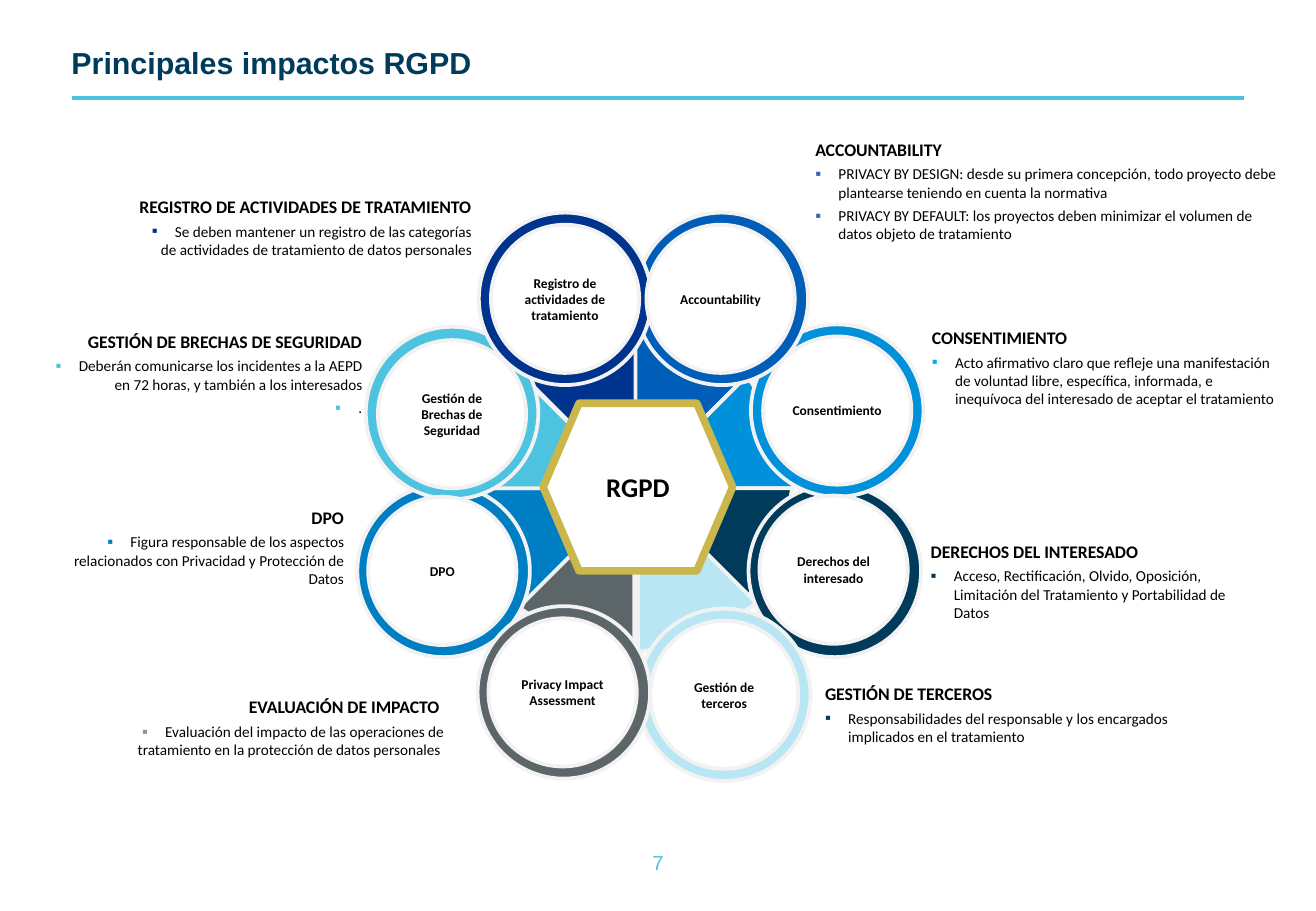
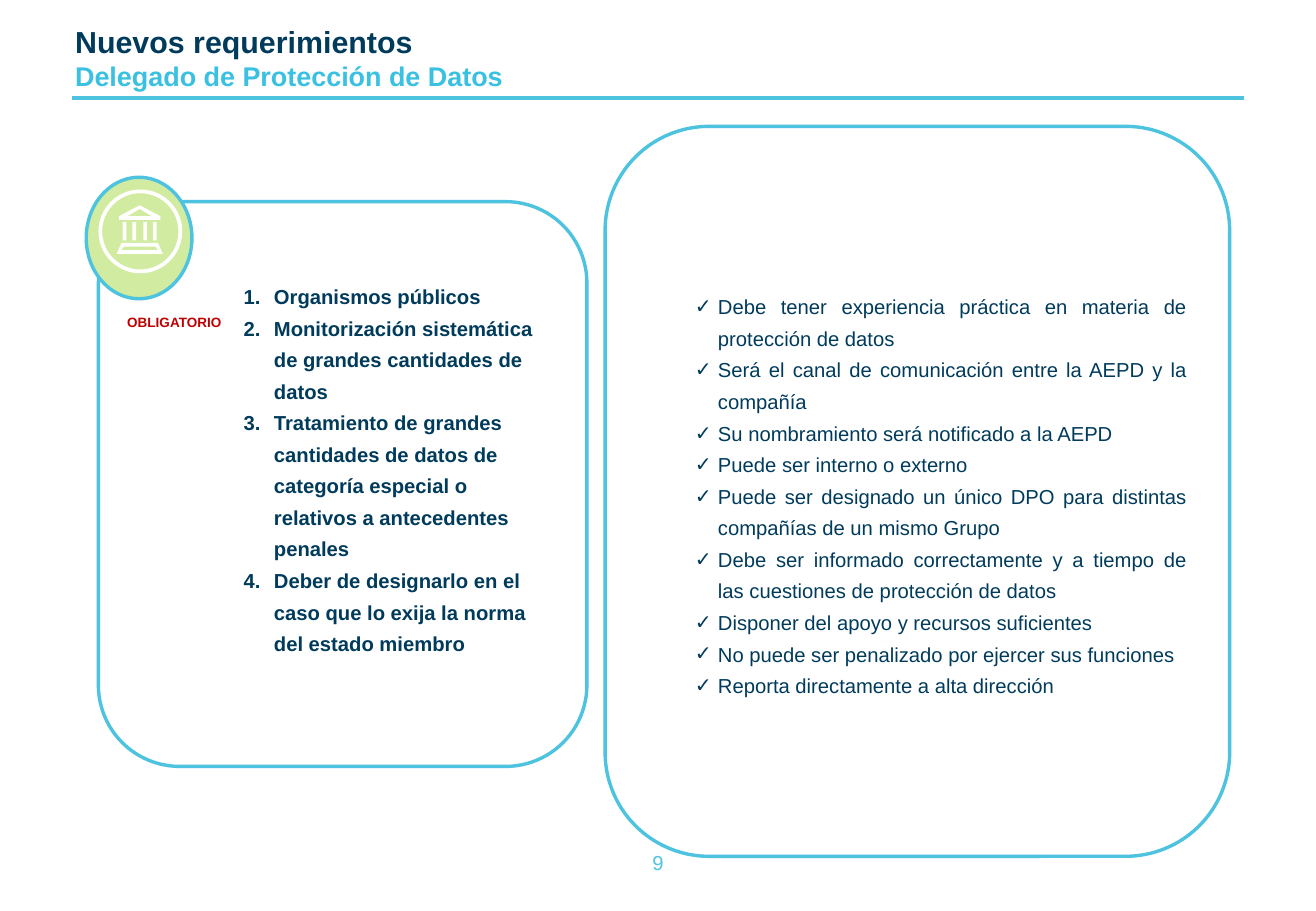
import math

import lxml.etree
import pptx
import pptx.dml.color
import pptx.enum.shapes
import pptx.enum.text
import pptx.oxml.ns
import pptx.util

PX = 9144  # EMU, 100 px to the inch
COLORS = {
    "navy": "003B5C", "cyan": "4EC3E0", "subtitle": "3AC1E1", "blue": "005EB8",
    "sky": "0091DA", "pale": "B8E7F3", "slate": "5C6568", "ocean": "007EC4",
    "royal": "00338D", "mist": "F2F2F2", "gold": "CAB64B", "white": "FFFFFF",
    "black": "000000", "grey": "8D969A", "azure": "00B0F0", "denim": "4066AA",
    "lime": "D1ECA0", "red": "C00000",
}
SHAPE = pptx.enum.shapes.MSO_SHAPE
STRAIGHT = pptx.enum.shapes.MSO_CONNECTOR.STRAIGHT
ALIGN = pptx.enum.text.PP_ALIGN
ANCHOR = pptx.enum.text.MSO_ANCHOR
qn = pptx.oxml.ns.qn


def paint(shape, fill, line, weight=2.25):
    """Set fill and outline, and remove the theme shadow."""
    if fill:
        shape.fill.solid()
        shape.fill.fore_color.rgb = pptx.dml.color.RGBColor.from_string(COLORS[fill])
    if line:
        shape.line.color.rgb = pptx.dml.color.RGBColor.from_string(COLORS[line])
        shape.line.width = pptx.util.Pt(weight)
    else:
        shape.line.fill.background()
    lxml.etree.SubElement(shape._element.spPr, qn("a:effectLst"))


def write(frame, text, size, color, bold=False, font="Arial", align=ALIGN.LEFT,
          after=0, spacing=None, indent=(0, 0), bullet=None, bullet_color=None, percent=100):
    """Add one paragraph; bullet is a character, or "1." for automatic numbers."""
    frame.word_wrap = True
    first = frame.paragraphs[0]
    paragraph = frame.add_paragraph() if first.runs else first
    paragraph.add_run().text = text
    paragraph.alignment = align
    paragraph.space_after = pptx.util.Pt(after)
    if spacing:
        paragraph.line_spacing = spacing
    if bullet:
        props = paragraph._p.get_or_add_pPr()
        props.set("marL", str(indent[0] * PX))
        props.set("indent", str(indent[1] * PX))
        tint = lxml.etree.SubElement(props, qn("a:buClr"))
        lxml.etree.SubElement(tint, qn("a:srgbClr"), val=COLORS[bullet_color])
        lxml.etree.SubElement(props, qn("a:buSzPct"), val=str(percent * 1000))
        lxml.etree.SubElement(props, qn("a:buFont"), typeface="Arial")
        if bullet == "1.":
            lxml.etree.SubElement(props, qn("a:buAutoNum"), type="arabicPeriod")
        else:
            lxml.etree.SubElement(props, qn("a:buChar"), char=bullet)
    paragraph.font.name = font
    paragraph.font.size = pptx.util.Pt(size)
    paragraph.font.bold = bold
    paragraph.font.color.rgb = pptx.dml.color.RGBColor.from_string(COLORS[color])


deck = pptx.Presentation()
deck.slide_width = 1083 * PX
deck.slide_height = 750 * PX

# Shared header and page number
headers = [
    ("7", (49, 14), [("Principales impactos RGPD", 18, "navy")]),
    ("9", (52, 24), [("Nuevos requerimientos", 18, "navy"),
                     ("Delegado de Protección de Datos", 16, "subtitle")]),
]
for number, (left, top), titles in headers:
    page = deck.slides.add_slide(deck.slide_layouts[6])
    header_line = page.shapes.add_connector(STRAIGHT, 59 * PX, 81 * PX, 1024 * PX, 81 * PX)
    paint(header_line, None, "cyan")
    box = page.shapes.add_textbox(415 * PX, 695 * PX, 253 * PX, 40 * PX)
    write(box.text_frame, number, 12, "cyan", align=ALIGN.CENTER)
    box = page.shapes.add_textbox(left * PX, top * PX, 984 * PX, 57 * PX)
    box.text_frame.vertical_anchor = ANCHOR.BOTTOM
    for title, size, color in titles:
        write(box.text_frame, title, size, color, bold=True)

wheel_page, officer_page = deck.slides

# Wheel: one 45 degree wedge per topic, clockwise from the top
wedges = [
    ("blue", 522, 402, 132), ("sky", 522, 402, 131), ("navy", 522, 402, 130),
    ("pale", 525, 399, 138), ("slate", 522, 402, 137), ("ocean", 525, 402, 136),
    ("cyan", 522, 402, 136), ("royal", 523, 402, 135),
]
ARC_STEPS = 2
for index, (color, hub_x, hub_y, radius) in enumerate(wedges):
    arc = []
    for step in range(ARC_STEPS + 1):
        angle = math.radians(45 * (index + step / ARC_STEPS) - 90)
        arc.append((round((hub_x + radius * math.cos(angle)) * PX),
                    round((hub_y + radius * math.sin(angle)) * PX)))
    builder = wheel_page.shapes.build_freeform(hub_x * PX, hub_y * PX)
    builder.add_line_segments(arc, close=True)
    paint(builder.convert_to_shape(), color, "mist")

# Label, colour, ring corner, disc corner
topics = [
    ("DPO", "ocean", (294, 399), (303, 409)),
    ("Gestión de Brechas de Seguridad", "cyan", (301, 269), (311, 280)),
    ("Derechos del interesado", "navy", (616, 399), (625, 408)),
    ("Consentimiento", "sky", (618, 267), (628, 277)),
    ("Accountability", "blue", (523, 175), (532, 185)),
    ("Registro de actividades de tratamiento", "royal", (394, 175), (404, 185)),
    ("Gestión de terceros", "pale", (525, 501), (535, 511)),
    ("Privacy Impact Assessment", "slate", (393, 499), (402, 509)),
]
for label, color, (left, top), disc_corner in topics:
    ring = wheel_page.shapes.add_shape(SHAPE.OVAL, left * PX, top * PX, 142 * PX, 142 * PX)
    paint(ring, color, "mist")

centres = [(SHAPE.OVAL, label, (*corner, 122, 122), 8, "mist", 2.25)
           for label, color, ring_corner, corner in topics]
centres.append((SHAPE.HEXAGON, "RGPD", (447, 332, 156, 138), 16, "gold", 4.5))
for kind, label, place, size, line, weight in centres:
    centre = wheel_page.shapes.add_shape(kind, *(value * PX for value in place))
    if kind == SHAPE.HEXAGON:
        centre.adjustments[0] = 0.214
    paint(centre, "white", line, weight)
    frame = centre.text_frame
    frame.margin_left = frame.margin_right = frame.margin_top = frame.margin_bottom = 0
    frame.vertical_anchor = ANCHOR.MIDDLE
    write(frame, label, size, "black", bold=True, font="Calibri", align=ALIGN.CENTER)

callouts = [
    ((110, 161, 278, 70), ALIGN.RIGHT, "royal", "REGISTRO DE ACTIVIDADES DE TRATAMIENTO",
     ["Se deben mantener un registro de las categorías de actividades de tratamiento "
      "de datos personales"]),
    ((43, 272, 255, 72), ALIGN.RIGHT, "cyan", "GESTIÓN DE BRECHAS DE SEGURIDAD",
     ["Deberán comunicarse los incidentes a la AEPD en 72 horas, y también a los interesados",
      "."]),
    ((33, 417, 250, 67), ALIGN.RIGHT, "ocean", "DPO",
     ["Figura responsable de los aspectos relacionados con Privacidad y Protección de Datos"]),
    ((90, 573, 275, 52), ALIGN.RIGHT, "grey", "EVALUACIÓN DE IMPACTO ",
     ["Evaluación del impacto de las operaciones de tratamiento en la protección de "
      "datos personales "]),
    ((767, 269, 286, 67), ALIGN.LEFT, "azure", "CONSENTIMIENTO",
     ["Acto afirmativo claro que refleje una manifestación de voluntad libre, específica, "
      "informada, e inequívoca del interesado de aceptar el tratamiento"]),
    ((766, 445, 247, 67), ALIGN.LEFT, "navy", "DERECHOS DEL INTERESADO",
     ["Acceso, Rectificación, Olvido, Oposición, Limitación del Tratamiento y "
      "Portabilidad de Datos"]),
    ((679, 562, 284, 52), ALIGN.LEFT, "navy", "GESTIÓN DE TERCEROS",
     ["Responsabilidades del responsable y los encargados implicados en el tratamiento"]),
    ((671, 114, 380, 87), ALIGN.LEFT, "denim", "ACCOUNTABILITY",
     ["PRIVACY BY DESIGN: desde su primera concepción, todo proyecto debe plantearse "
      "teniendo en cuenta la normativa",
      "PRIVACY BY DEFAULT: los proyectos deben minimizar el volumen de datos objeto "
      "de tratamiento"]),
]
for place, align, color, heading, points in callouts:
    box = wheel_page.shapes.add_textbox(*(value * PX for value in place))
    frame = box.text_frame
    frame.margin_left = frame.margin_right = frame.margin_top = frame.margin_bottom = 0
    write(frame, heading, 10.5, "black", bold=True, font="Calibri", align=align, after=3)
    for point in points:
        write(frame, point, 9, "black", font="Calibri", align=align, after=3,
              indent=(19, -19), bullet="▪", bullet_color=color, percent=110)

# Data protection officer: two panels
panels = [
    ((81, 166, 402, 465), 34, True, ALIGN.LEFT, (115, -25), "1.", [
        "Organismos públicos",
        "Monitorización sistemática de grandes cantidades de datos",
        "Tratamiento de grandes cantidades de datos de categoría especial o relativos "
        "a antecedentes penales",
        "Deber de designarlo en el caso que lo exija la norma del estado miembro",
    ]),
    ((498, 104, 514, 601), 3, False, ALIGN.JUSTIFY, (58, -19), "✓", [
        "Debe tener experiencia práctica en materia de protección de datos",
        "Será el canal de comunicación entre la AEPD y la compañía",
        "Su nombramiento será notificado a la AEPD",
        "Puede ser interno o externo",
        "Puede ser designado un único DPO para distintas compañías de un mismo Grupo",
        "Debe ser informado correctamente y a tiempo de las cuestiones de protección de datos",
        "Disponer del apoyo y recursos suficientes ",
        "No puede ser penalizado por ejercer sus funciones",
        "Reporta directamente a alta dirección",
    ]),
]
for place, bottom, bold, align, indent, bullet, points in panels:
    panel = officer_page.shapes.add_shape(
        SHAPE.ROUNDED_RECTANGLE, *(value * PX for value in place))
    paint(panel, "white", "cyan", 2)
    panel.text_frame.vertical_anchor = ANCHOR.MIDDLE
    panel.text_frame.margin_bottom = bottom * PX
    for point in points:
        write(panel.text_frame, point, 12, "navy", bold=bold, align=align, spacing=1.3,
              indent=indent, bullet=bullet, bullet_color="navy")

tag = officer_page.shapes.add_shape(SHAPE.RECTANGLE, 89 * PX, 253 * PX, 109 * PX, 24 * PX)
paint(tag, "white", None)
write(tag.text_frame, "OBLIGATORIO", 8, "red", bold=True, align=ALIGN.CENTER)

# Public building badge: oval, ring and one outline with cut-outs
badge = officer_page.shapes.add_shape(SHAPE.OVAL, 71 * PX, 146 * PX, 87 * PX, 100 * PX)
paint(badge, "lime", "cyan", 2)
badge_ring = officer_page.shapes.add_shape(SHAPE.DONUT, 81 * PX, 156 * PX, 69 * PX, 69 * PX)
badge_ring.adjustments[0] = 0.045
paint(badge_ring, "white", None)

contours = [
    [(96, 209), (134, 209), (130, 200), (100, 200)],
    [(100, 206), (130, 206), (128, 203), (102, 203)],
    [(98, 181), (98, 178), (115, 169), (132, 178), (132, 181)],
    [(105, 178), (125, 178), (115, 172)],
]
for left in (101, 109, 118, 126):
    contours.append([(left, 183), (left + 3, 183), (left + 3, 198), (left, 198)])
builder = officer_page.shapes.build_freeform(*contours[0][0], scale=PX)
for contour in contours:
    if contour is not contours[0]:
        builder.move_to(*contour[0])
    builder.add_line_segments(contour[1:], close=True)
paint(builder.convert_to_shape(), "white", None)

deck.save("out.pptx")
